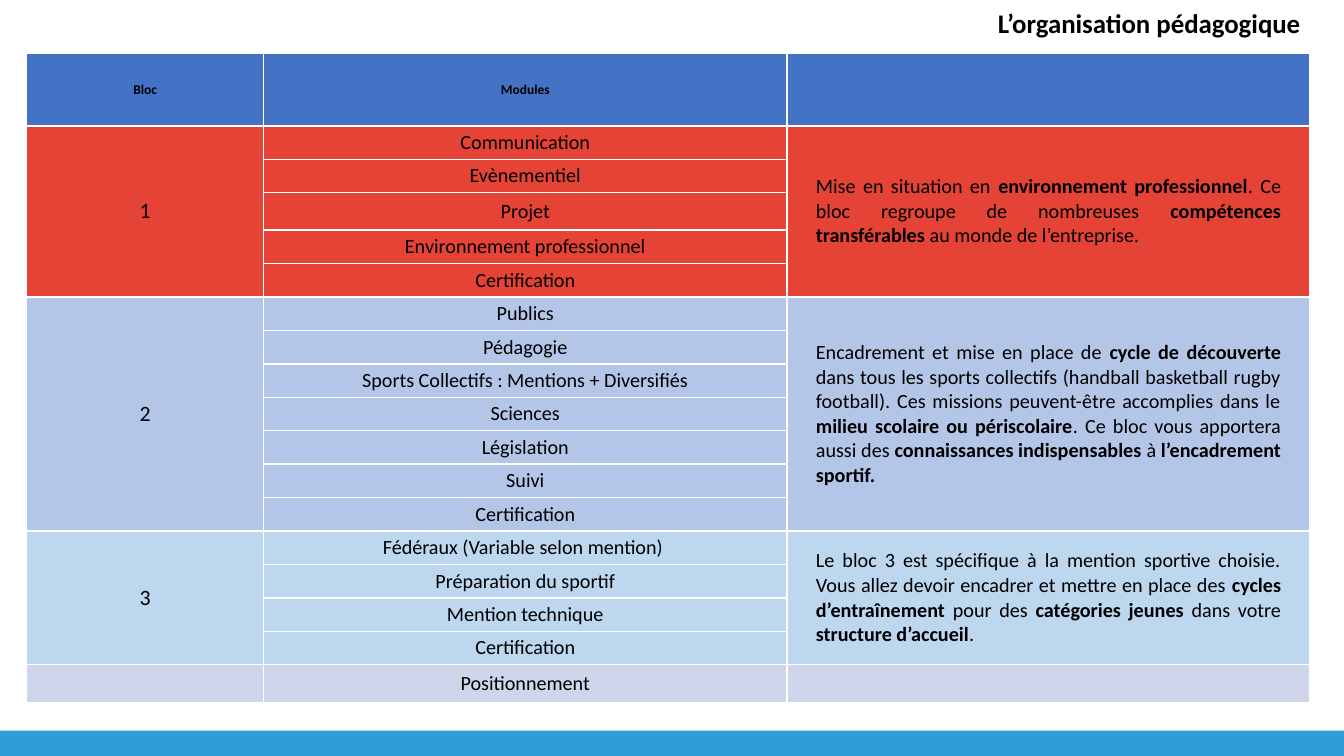
from lxml.etree import SubElement
from pptx import Presentation
from pptx.dml.color import RGBColor
from pptx.enum.shapes import MSO_SHAPE as Shape
from pptx.enum.text import MSO_ANCHOR as Anchor, PP_ALIGN as Align
from pptx.oxml.ns import qn
from pptx.util import Inches, Pt

WIDTH, HEIGHT = 11.11, 6.25
FONT = "Calibri"
BLACK = RGBColor(0x00, 0x00, 0x00)
WHITE = RGBColor(0xFF, 0xFF, 0xFF)
FOOTER_BLUE = RGBColor(0x30, 0x9D, 0xD8)
HEADER_BLUE = RGBColor(0x44, 0x72, 0xC4)
RED = RGBColor(0xE6, 0x43, 0x37)
PERIWINKLE = RGBColor(0xB4, 0xC6, 0xE7)
SKY = RGBColor(0xBD, 0xD7, 0xEE)
LAVENDER = RGBColor(0xCF, 0xD5, 0xEA)

TABLE_LEFT, TABLE_TOP, TABLE_WIDTH, TABLE_HEIGHT = 0.22, 0.44, 10.61, 5.37
BLOC_WIDTH = 1.96
HEADER_HEIGHT, TALL_HEIGHT = 0.6, 0.31
TALL_ROWS = (3, 17)
HEADINGS = ("Bloc", "Modules", "")

BLOCS = [
    ("1", RED,
     ["Communication", "Evènementiel", "Projet", "Environnement professionnel",
      "Certification"],
     [("Mise en situation en ", False), ("environnement professionnel", True),
      (". Ce bloc regroupe de nombreuses ", False),
      ("compétences transférables ", True),
      ("au monde de l’entreprise.", False)]),
    ("2", PERIWINKLE,
     ["Publics", "Pédagogie", "Sports Collectifs : Mentions + Diversifiés",
      "Sciences", "Législation", "Suivi", "Certification"],
     [("Encadrement et mise en place de ", False), ("cycle de découverte ", True),
      ("dans tous les sports collectifs (handball basketball rugby football). "
       "Ces missions peuvent-être accomplies dans le ", False),
      ("milieu scolaire ou périscolaire", True),
      (". Ce bloc vous apportera aussi des ", False),
      ("connaissances indispensables ", True), ("à", False),
      (" l’encadrement sportif.", True)]),
    ("3", SKY,
     ["Fédéraux (Variable selon mention) ", "Préparation du sportif",
      "Mention technique", "Certification"],
     [("Le bloc 3 est spécifique à la mention sportive choisie. Vous allez "
       "devoir encadrer et mettre en place des ", False),
      ("cycles d’entraînement ", True), ("pour des ", False),
      ("catégories jeunes ", True), ("dans votre ", False),
      ("structure d’accueil", True), (". ", False)]),
    ("", LAVENDER, ["Positionnement"], []),
]


def style_font(para, size, bold=None):
    para.font.name = FONT
    para.font.size = Pt(size)
    para.font.color.rgb = BLACK
    para.font.bold = bold


def add_footer(page):
    band = page.shapes.add_shape(Shape.RECTANGLE, 0, Inches(6.04),
                                 Inches(WIDTH), Inches(HEIGHT - 6.04))
    band.shadow.inherit = False
    band.fill.solid()
    band.fill.fore_color.rgb = FOOTER_BLUE
    band.line.fill.background()


def add_title(page, text):
    left = 8.15
    box = page.shapes.add_textbox(Inches(left), Inches(0.01),
                                  Inches(WIDTH - left), Inches(0.37))
    box.text_frame.word_wrap = True
    para = box.text_frame.paragraphs[0]
    para.text = text
    style_font(para, 16, True)


def paint_cell(cell, color, top=1, bottom=1):
    properties = cell._tc.get_or_add_tcPr()
    for side, width in (("L", 1), ("R", 1), ("T", top), ("B", bottom)):
        line = SubElement(properties, qn(f"a:ln{side}"), w=str(Pt(width)))
        solid = SubElement(line, qn("a:solidFill"))
        SubElement(solid, qn("a:srgbClr"), val=str(WHITE))
    cell.fill.solid()
    cell.fill.fore_color.rgb = color
    cell.margin_left = cell.margin_right = 0
    cell.margin_top = cell.margin_bottom = 0
    cell.vertical_anchor = Anchor.MIDDLE
    style_font(cell.text_frame.paragraphs[0], 12)


def write_cell(cell, text, size, bold=False):
    para = cell.text_frame.paragraphs[0]
    para.text = text
    para.alignment = Align.CENTER
    style_font(para, size, bold)


def write_description(cell, spans):
    cell.margin_left = cell.margin_right = Inches(0.24)
    para = cell.text_frame.paragraphs[0]
    para.alignment = Align.JUSTIFY
    for text, bold in spans:
        span = para.add_run()
        span.text = text
        span.font.bold = bold


def fill_bloc(table, first, number, color, modules, spans):
    last = first + len(modules) - 1
    for row, module in enumerate(modules, first):
        for column in range(3):
            paint_cell(table.cell(row, column), color, top=1.5 if row == 1 else 1)
        write_cell(table.cell(row, 1), module, 12)
    if last > first:
        for column in (0, 2):
            table.cell(first, column).merge(table.cell(last, column))
    if number:
        write_cell(table.cell(first, 0), number, 13)
    if spans:
        write_description(table.cell(first, 2), spans)
    return last + 1


def add_programme(page):
    count = 1 + sum(len(modules) for _, _, modules, _ in BLOCS)
    table = page.shapes.add_table(count, 3, Inches(TABLE_LEFT), Inches(TABLE_TOP),
                                  Inches(TABLE_WIDTH), Inches(TABLE_HEIGHT)).table
    table.first_row = table.horz_banding = False
    wide = (TABLE_WIDTH - BLOC_WIDTH) / 2
    for column, width in zip(table.columns, (BLOC_WIDTH, wide, wide)):
        column.width = Inches(width)
    tall = len(TALL_ROWS)
    short = (TABLE_HEIGHT - HEADER_HEIGHT - tall * TALL_HEIGHT) / (count - 1 - tall)
    for index, row in enumerate(table.rows):
        row.height = Inches(TALL_HEIGHT if index in TALL_ROWS else short)
    table.rows[0].height = Inches(HEADER_HEIGHT)
    for column, heading in enumerate(HEADINGS):
        cell = table.cell(0, column)
        paint_cell(cell, HEADER_BLUE, bottom=1.5)
        if heading:
            write_cell(cell, heading, 8, True)
    first = 1
    for bloc in BLOCS:
        first = fill_bloc(table, first, *bloc)


def main():
    deck = Presentation()
    deck.slide_width, deck.slide_height = Inches(WIDTH), Inches(HEIGHT)
    page = deck.slides.add_slide(deck.slide_layouts[6])
    add_footer(page)
    add_programme(page)
    add_title(page, "L’organisation pédagogique")
    deck.save("out.pptx")


if __name__ == "__main__":
    main()
